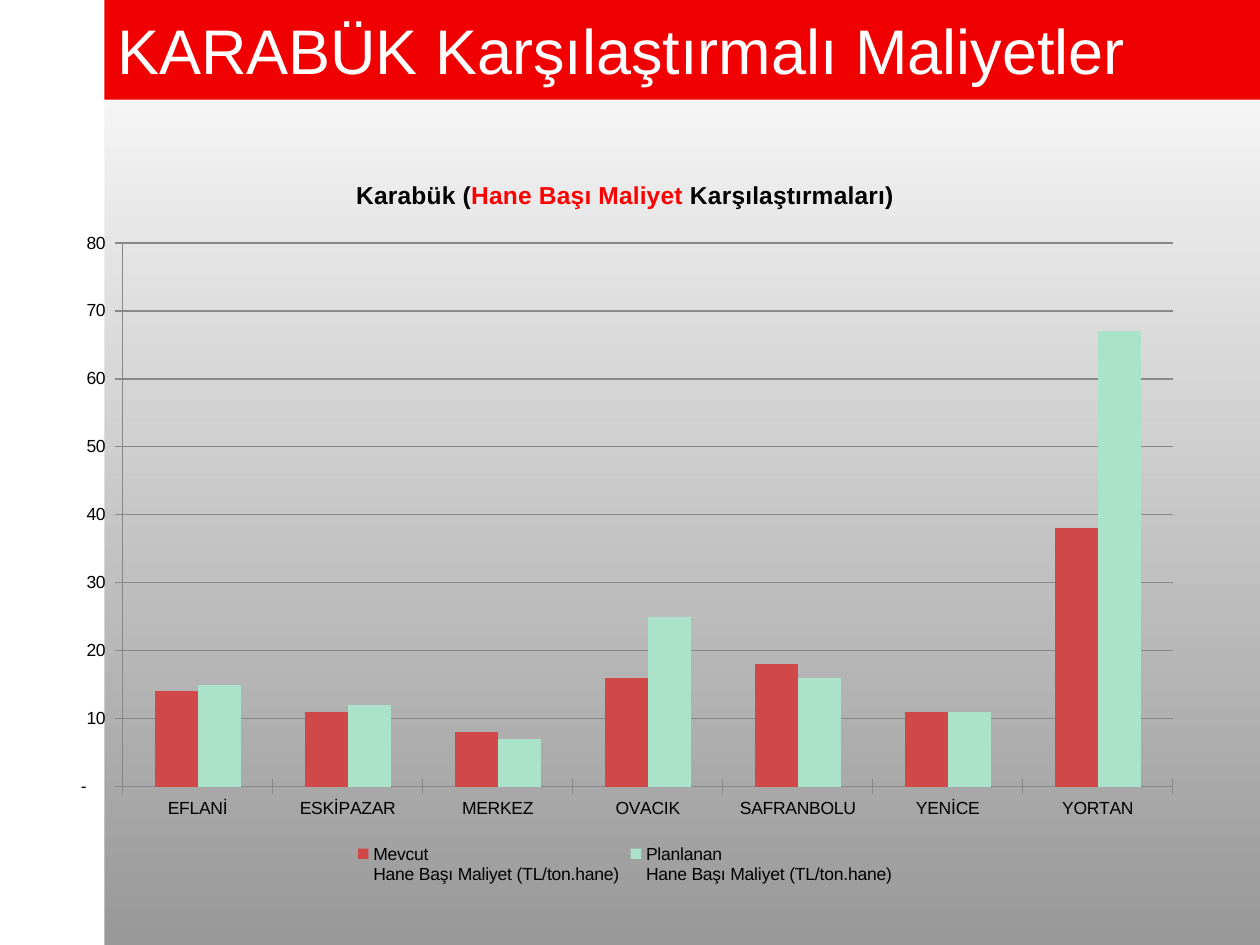
from dataclasses import dataclass

from lxml.etree import SubElement
from pptx import Presentation
from pptx.chart.data import CategoryChartData
from pptx.dml.color import RGBColor as Rgb
from pptx.enum.chart import XL_CHART_TYPE as ChartType, XL_LEGEND_POSITION as LegendPos, XL_TICK_MARK as Tick
from pptx.enum.shapes import MSO_SHAPE as Preset
from pptx.enum.text import MSO_ANCHOR as Anchor, MSO_AUTO_SIZE as AutoSize, PP_ALIGN as Align
from pptx.oxml.ns import qn
from pptx.util import Inches, Pt


@dataclass(frozen=True)
class Theme:
    """Colours, font and type sizes of the slide."""
    font: str = "Arial"
    white: Rgb = Rgb(0xFF, 0xFF, 0xFF)
    black: Rgb = Rgb(0, 0, 0)
    shade: Rgb = Rgb(0x98, 0x98, 0x98)
    banner: Rgb = Rgb(0xF0, 0, 0)
    accent: Rgb = Rgb(0xFF, 0, 0)
    rule: Rgb = Rgb(0x87, 0x87, 0x87)
    title_size: Pt = Pt(36)
    heading_size: Pt = Pt(14)
    label_size: Pt = Pt(10)


@dataclass(frozen=True)
class Band:
    """A plain rectangle at the slide edge, in inches."""
    left: float
    top: float
    width: float
    height: float
    color: Rgb


@dataclass(frozen=True)
class CostSeries:
    """One set of costs per household."""
    period: str
    costs: tuple[int, ...]
    color: Rgb


THEME = Theme()
BANDS = (Band(0, 0, 10, 0.79, THEME.banner), Band(0, 0, 0.83, 7.5, THEME.white))
DISTRICTS = ("EFLANİ", "ESKİPAZAR", "MERKEZ", "OVACIK", "SAFRANBOLU", "YENİCE", "YORTAN")
COSTS = (
    CostSeries("Mevcut", (14, 11, 8, 16, 18, 11, 38), Rgb(0xD0, 0x48, 0x48)),
    CostSeries("Planlanan", (15, 12, 7, 25, 16, 11, 67), Rgb(0xAA, 0xE2, 0xCA)),
)
HEADING = (
    ("Karabük (", THEME.black),
    ("Hane Başı Maliyet", THEME.accent),
    (" Karşılaştırmaları)", THEME.black),
)
PLOT_AREA = {"x": 0.06, "y": 0.12, "w": 0.92, "h": 0.74}
COST_FORMAT = r'_(* #,##0_);_(* \(#,##0\);_(* "-"??_);_(@_)'


def apply_format(target, **values) -> None:
    """Set each given attribute on the target."""
    for attribute, value in values.items():
        setattr(target, attribute, value)


def format_font(font, size: Pt, color: Rgb, bold: bool = False) -> None:
    """Give a font the slide typeface, a size, a weight and a colour."""
    apply_format(font, name=THEME.font, size=size, bold=bold)
    font.color.rgb = color


def paint_background(slide) -> None:
    """Fill the background with a gradient running downwards."""
    fill = slide.background.fill
    fill.gradient()
    fill.gradient_angle = 270
    for stop, color in zip(fill.gradient_stops, (THEME.white, THEME.shade)):
        stop.color.rgb = color


def draw_band(slide, band: Band) -> None:
    """Draw one flat rectangle."""
    lengths = map(Inches, (band.left, band.top, band.width, band.height))
    rectangle = slide.shapes.add_shape(Preset.RECTANGLE, *lengths)
    rectangle.shadow.inherit = False
    rectangle.fill.solid()
    rectangle.fill.fore_color.rgb = band.color
    rectangle.line.fill.background()


def write_title(slide, wording: str) -> None:
    """Place the title placeholder in front of the bands."""
    title = slide.shapes.title
    apply_format(title, left=Inches(0.83), top=Inches(0), width=Inches(9), height=Inches(0.79))
    frame = title.text_frame
    frame.text = wording
    apply_format(frame, vertical_anchor=Anchor.MIDDLE, word_wrap=True, auto_size=AutoSize.NONE)
    paragraph = frame.paragraphs[0]
    paragraph.alignment = Align.LEFT
    format_font(paragraph.runs[0].font, THEME.title_size, THEME.white)
    slide.shapes._spTree.append(title._element)


def fix_plot_area(chart) -> None:
    """Set the inner plot area as fractions of the chart."""
    plot_area = chart._chartSpace.chart.plotArea
    for old_layout in plot_area.findall(qn("c:layout")):
        plot_area.remove(old_layout)
    layout = SubElement(plot_area, qn("c:layout"))
    plot_area.insert(0, layout)
    manual = SubElement(layout, qn("c:manualLayout"))
    settings = {"layoutTarget": "inner", "xMode": "edge", "yMode": "edge", **PLOT_AREA}
    for tag, value in settings.items():
        SubElement(manual, qn(f"c:{tag}")).set("val", str(value))


def format_axes(chart) -> None:
    """Format both axes and the gridlines."""
    for axis in (chart.category_axis, chart.value_axis):
        apply_format(axis, major_tick_mark=Tick.CROSS, minor_tick_mark=Tick.NONE)
        axis.format.line.color.rgb = THEME.rule
        format_font(axis.tick_labels.font, THEME.label_size, THEME.black)
    apply_format(chart.value_axis, minimum_scale=0, maximum_scale=80, major_unit=10,
                 has_major_gridlines=True)
    apply_format(chart.value_axis.tick_labels, number_format=COST_FORMAT,
                 number_format_is_linked=False)
    chart.value_axis.major_gridlines.format.line.color.rgb = THEME.rule


def draw_cost_chart(slide) -> None:
    """Draw the clustered columns with heading and legend."""
    cost_data = CategoryChartData()
    cost_data.categories = DISTRICTS
    for cost in COSTS:
        cost_data.add_series(f"{cost.period}\nHane Başı Maliyet (TL/ton.hane)", cost.costs)
    lengths = map(Inches, (0.43, 1.23, 9.06, 5.83))
    chart = slide.shapes.add_chart(ChartType.COLUMN_CLUSTERED, *lengths, cost_data).chart
    format_font(chart.font, THEME.label_size, THEME.black)

    heading = chart.chart_title.text_frame.paragraphs[0]
    for wording, color in HEADING:
        run = heading.add_run()
        run.text = wording
        format_font(run.font, THEME.heading_size, color, bold=True)

    chart.has_legend = True
    apply_format(chart.legend, position=LegendPos.BOTTOM, include_in_layout=False)
    format_font(chart.legend.font, THEME.label_size, THEME.black)

    columns = chart.plots[0]
    apply_format(columns, gap_width=150, overlap=0, vary_by_categories=False)
    for series, cost in zip(columns.series, COSTS):
        series.format.fill.solid()
        series.format.fill.fore_color.rgb = cost.color
    format_axes(chart)
    fix_plot_area(chart)


def main() -> None:
    """Build and save the slide."""
    deck = Presentation()
    apply_format(deck, slide_width=Inches(10), slide_height=Inches(7.5))
    slide = deck.slides.add_slide(deck.slide_layouts[5])
    paint_background(slide)
    for band in BANDS:
        draw_band(slide, band)
    write_title(slide, "KARABÜK Karşılaştırmalı Maliyetler")
    draw_cost_chart(slide)
    deck.save("out.pptx")


if __name__ == "__main__":
    main()
